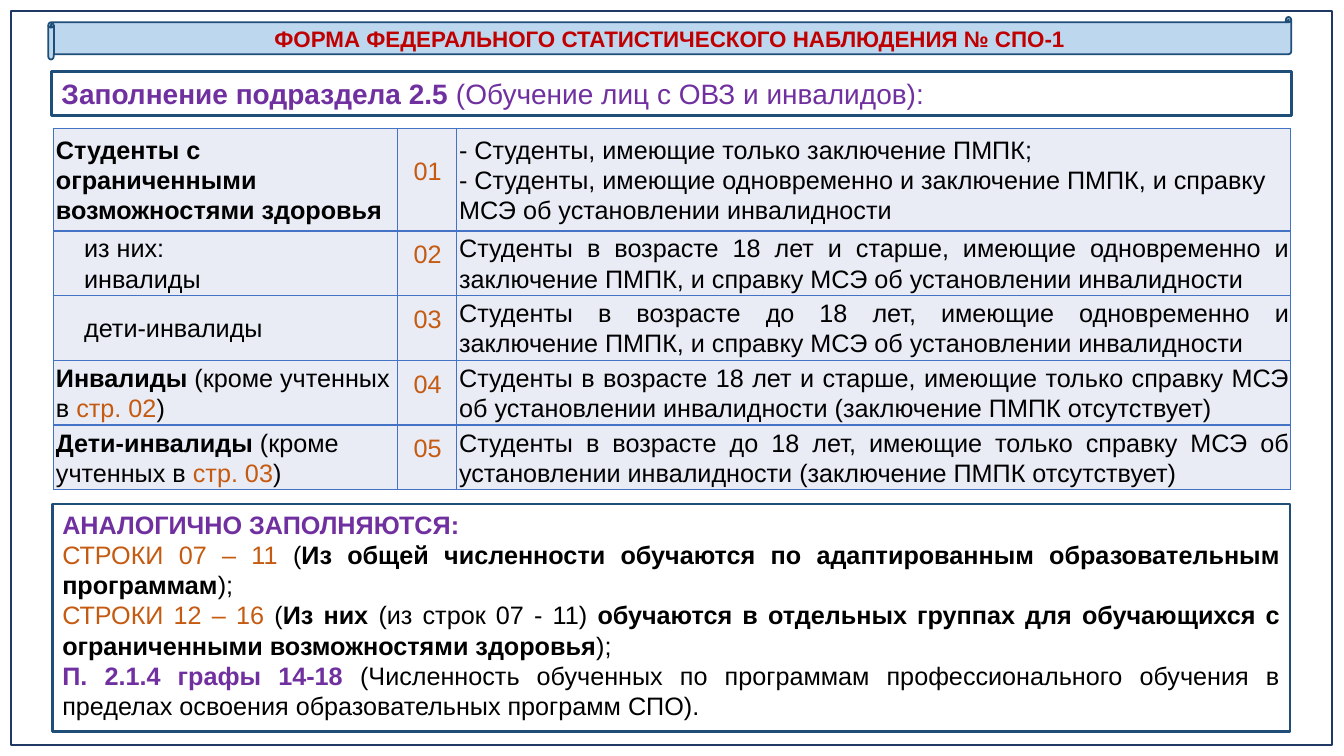
import pptx
import pptx.dml.color
import pptx.enum.shapes
import pptx.enum.text
import pptx.oxml
import pptx.oxml.ns
import pptx.util
from lxml import etree

Cm = pptx.util.Cm
Pt = pptx.util.Pt
SHAPES = pptx.enum.shapes.MSO_SHAPE
ALIGN = pptx.enum.text.PP_ALIGN
ANCHOR = pptx.enum.text.MSO_ANCHOR

FONT = "Arial"
COLORS = {
    "frame": "203864",
    "outline": "1F4E79",
    "scroll": "BDD7EE",
    "title": "C00000",
    "purple": "7030A0",
    "orange": "C55A11",
    "text": "000000",
    "cell": "E9EBF5",
    "border": "4472C4",
}
PLAIN, BOLD = ("text", False), ("text", True)
PURPLE, PURPLE_BOLD = ("purple", False), ("purple", True)
ORANGE = ("orange", False)

COLUMN_WIDTHS = [8.66, 1.5, 21.01]
ROW_HEIGHTS = [2.59] + [1.63] * 4
CATEGORIES = [
    (0.03, [("Студенты с ограниченными возможностями здоровья", BOLD)]),
    (0.74, [("из них:\nинвалиды", PLAIN)]),
    (0.74, [("дети-инвалиды", PLAIN)]),
    (0.03, [("Инвалиды", BOLD), (" (кроме учтенных в ", PLAIN),
            ("стр. 02", ORANGE), (")", PLAIN)]),
    (0.03, [("Дети-инвалиды", BOLD), (" (кроме учтенных в ", PLAIN),
            ("стр. 03", ORANGE), (")", PLAIN)]),
]
EXPLANATIONS = [
    ["- Студенты, имеющие только заключение ПМПК;",
     "- Студенты, имеющие одновременно и заключение ПМПК, и справку МСЭ об установлении инвалидности"],
    ["Студенты в возрасте 18 лет и старше, имеющие одновременно и заключение ПМПК, "
     "и справку МСЭ об установлении инвалидности"],
    ["Студенты в возрасте до 18 лет, имеющие одновременно и заключение ПМПК, "
     "и справку МСЭ об установлении инвалидности"],
    ["Студенты в возрасте 18 лет и старше, имеющие только справку МСЭ "
     "об установлении инвалидности (заключение ПМПК отсутствует)"],
    ["Студенты в возрасте до 18 лет, имеющие только справку МСЭ "
     "об установлении инвалидности (заключение ПМПК отсутствует)"],
]
SIMILAR_ROWS = [
    [("АНАЛОГИЧНО ЗАПОЛНЯЮТСЯ:", PURPLE_BOLD)],
    [("СТРОКИ 07 – 11 ", ORANGE), ("(", PLAIN),
     ("Из общей численности обучаются по адаптированным образовательным программам", BOLD),
     (");", PLAIN)],
    [("СТРОКИ 12 – 16 ", ORANGE), ("(", PLAIN), ("Из них ", BOLD),
     ("(из строк 07 - 11) ", PLAIN),
     ("обучаются в отдельных группах для обучающихся с ограниченными возможностями здоровья", BOLD),
     (");", PLAIN)],
    [("П. 2.1.4 графы 14-18 ", PURPLE_BOLD),
     ("(Численность обученных по программам профессионального обучения "
      "в пределах освоения образовательных программ СПО).", PLAIN)],
]


def rgb(name):
    return pptx.dml.color.RGBColor.from_string(COLORS[name])


def style_font(font, style):
    color, bold = style
    font.color.rgb = rgb(color)
    font.bold = bold


def write_paragraph(paragraph, pieces, size=18, align=ALIGN.LEFT):
    paragraph.alignment = align
    paragraph.font.name = FONT
    paragraph.font.size = Pt(size)
    if len(pieces) == 1:
        text, style = pieces[0]
        paragraph.text = text.replace("\n", "\v")
        style_font(paragraph.font, style)
        return
    for text, style in pieces:
        run = paragraph.add_run()
        run.text = text
        style_font(run.font, style)


def next_paragraph(text_frame, index):
    return text_frame.add_paragraph() if index else text_frame.paragraphs[0]


def add_box(slide, kind, position, line, width, fill=None):
    shape = slide.shapes.add_shape(kind, *map(Cm, position))
    shape.shadow.inherit = False
    shape.line.color.rgb = rgb(line)
    shape.line.width = Pt(width)
    if fill:
        shape.fill.solid()
        shape.fill.fore_color.rgb = rgb(fill)
    else:
        shape.fill.background()
    return shape


def add_text_box(slide, position, paragraphs, size):
    shape = add_box(slide, SHAPES.RECTANGLE, position, "outline", 2)
    text_frame = shape.text_frame
    text_frame.word_wrap = True
    text_frame.vertical_anchor = ANCHOR.TOP
    for index, pieces in enumerate(paragraphs):
        align = ALIGN.JUSTIFY if index else ALIGN.LEFT
        write_paragraph(next_paragraph(text_frame, index), pieces, size, align)


def add_title(slide, text):
    position = (1.22, 0.43, 31.32, 1.07)
    add_box(slide, SHAPES.HORIZONTAL_SCROLL, position, "outline", 1.25, "scroll")
    title = slide.shapes.title
    title.left, title.top, title.width, title.height = map(Cm, position)
    text_frame = title.text_frame
    text_frame.auto_size = pptx.enum.text.MSO_AUTO_SIZE.NONE
    text_frame.vertical_anchor = ANCHOR.MIDDLE
    text_frame.margin_top = text_frame.margin_bottom = 0
    write_paragraph(text_frame.paragraphs[0], [(text, ("title", True))], 16, ALIGN.CENTER)
    slide.shapes._spTree.append(title._element)


def set_borders(cell):
    properties = cell._tc.get_or_add_tcPr()
    qn = pptx.oxml.ns.qn
    for index, side in enumerate(("lnL", "lnR", "lnT", "lnB")):
        line = etree.Element(qn("a:" + side), w=str(Pt(1)))
        fill = etree.SubElement(line, qn("a:solidFill"))
        etree.SubElement(fill, qn("a:srgbClr"), val=COLORS["border"])
        properties.insert(index, line)


def fill_cell(cell, paragraphs, align=ALIGN.LEFT, indent=0.03, spacing=1.07, before=0):
    cell.fill.solid()
    cell.fill.fore_color.rgb = rgb("cell")
    cell.vertical_anchor = ANCHOR.MIDDLE
    cell.margin_left = cell.margin_right = Cm(0.03)
    cell.margin_top = cell.margin_bottom = 0
    for index, pieces in enumerate(paragraphs):
        paragraph = next_paragraph(cell.text_frame, index)
        write_paragraph(paragraph, pieces, align=align)
        paragraph.line_spacing = spacing
        paragraph.space_before = Pt(before)
        properties = paragraph._p.get_or_add_pPr()
        properties.set("marL", str(Cm(indent)))
        properties.set("indent", "0")
    set_borders(cell)


def add_student_table(slide):
    frame = slide.shapes.add_table(
        len(ROW_HEIGHTS), len(COLUMN_WIDTHS), Cm(1.35), Cm(3.23),
        Cm(sum(COLUMN_WIDTHS)), Cm(sum(ROW_HEIGHTS)))
    table = frame.table
    table.first_row = table.horz_banding = False
    for column, width in zip(table.columns, COLUMN_WIDTHS):
        column.width = Cm(width)
    for index, height in enumerate(ROW_HEIGHTS):
        table.rows[index].height = Cm(height)
        indent, category = CATEGORIES[index]
        fill_cell(table.cell(index, 0), [category], indent=indent)
        fill_cell(table.cell(index, 1), [[(f"{index + 1:02}", ORANGE)]],
                  ALIGN.CENTER, spacing=Pt(8.3), before=1.5)
        fill_cell(table.cell(index, 2), [[(text, PLAIN)] for text in EXPLANATIONS[index]],
                  ALIGN.JUSTIFY if index else ALIGN.LEFT)


def main():
    presentation = pptx.Presentation()
    presentation.slide_width = Cm(33.87)
    presentation.slide_height = Cm(19.05)
    slide = presentation.slides.add_slide(presentation.slide_layouts[5])
    add_box(slide, SHAPES.RECTANGLE, (0.28, 0.28, 33.3, 18.49), "frame", 1.5)
    add_title(slide, "ФОРМА ФЕДЕРАЛЬНОГО СТАТИСТИЧЕСКОГО НАБЛЮДЕНИЯ № СПО-1")
    add_text_box(slide, (1.3, 1.8, 31.24, 1.12),
                 [[("Заполнение подраздела 2.5 ", PURPLE_BOLD),
                   ("(Обучение лиц с ОВЗ и инвалидов):", PURPLE)]], 20)
    add_student_table(slide)
    add_text_box(slide, (1.32, 12.7, 31.19, 5.74), SIMILAR_ROWS, 18)
    presentation.save("out.pptx")


if __name__ == "__main__":
    main()
